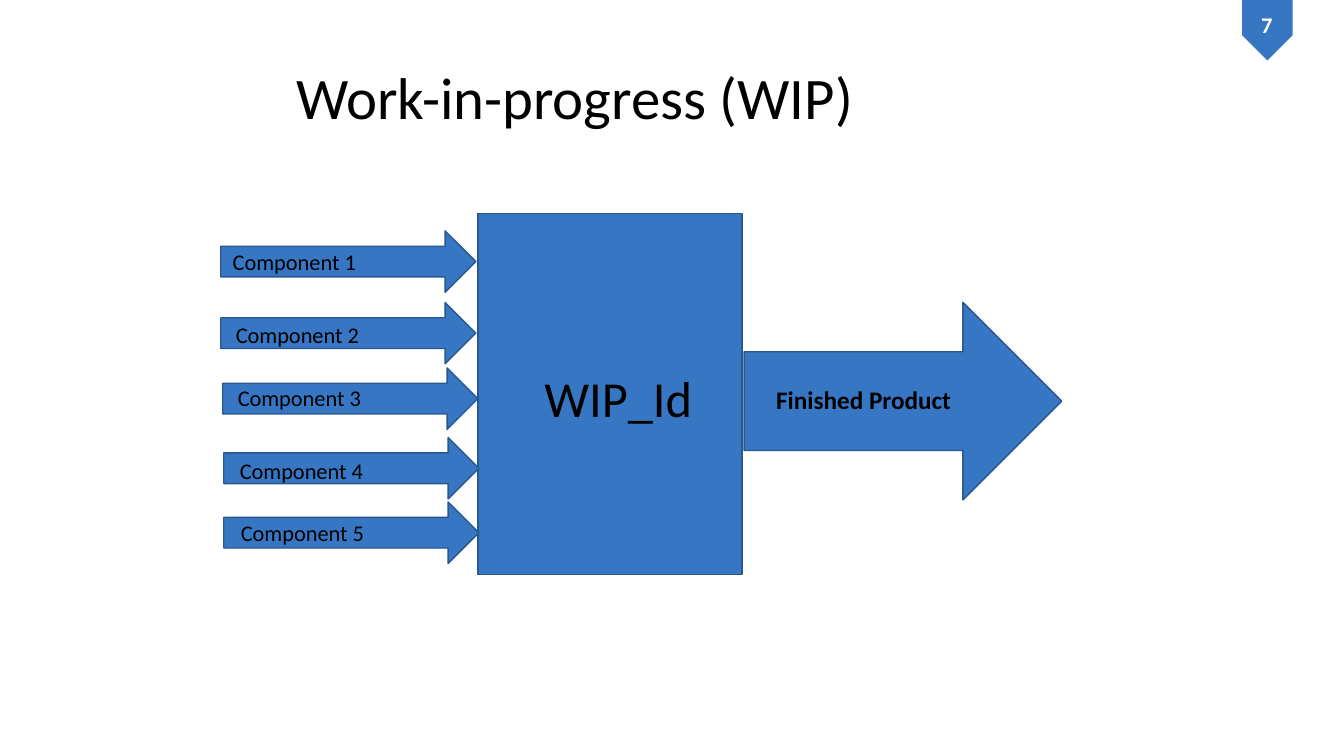
from pptx import Presentation
from pptx.dml.color import RGBColor
from pptx.enum.shapes import MSO_SHAPE
from pptx.enum.text import MSO_ANCHOR, PP_ALIGN
from pptx.util import Inches, Pt

BLUE = RGBColor(0x37, 0x76, 0xC3)
NAVY = RGBColor(0x29, 0x57, 0x90)
BLACK = RGBColor(0, 0, 0)
WHITE = RGBColor(0xFF, 0xFF, 0xFF)

# Arrow left, arrow top, label left, label top
COMPONENTS = [
    (2.19, 2.29, 2.21, 2.41),
    (2.19, 3.00, 2.24, 3.13),
    (2.21, 3.65, 2.26, 3.76),
    (2.22, 4.34, 2.28, 4.48),
    (2.22, 4.98, 2.29, 5.10),
]


def add_block(slide, kind, left, top, width, height, outline=NAVY):
    block = slide.shapes.add_shape(
        kind, Inches(left), Inches(top), Inches(width), Inches(height))
    block.shadow.inherit = False
    block.fill.solid()
    block.fill.fore_color.rgb = BLUE
    if outline is None:
        block.line.fill.background()
    else:
        block.line.color.rgb = outline
        block.line.width = Pt(1)
    return block


def add_text(slide, text, left, top, width, height, size=16, color=BLACK,
             bold=False, align=PP_ALIGN.LEFT, spacing=1.0):
    box = slide.shapes.add_textbox(
        Inches(left), Inches(top), Inches(width), Inches(height))
    frame = box.text_frame
    frame.word_wrap = True
    frame.vertical_anchor = MSO_ANCHOR.MIDDLE
    para = frame.paragraphs[0]
    para.alignment = align
    para.line_spacing = spacing
    run = para.add_run()
    run.text = text
    run.font.name = "Calibri"
    run.font.size = Pt(size)
    run.font.bold = bold
    run.font.color.rgb = color


def add_badge(slide, number):
    badge = add_block(slide, MSO_SHAPE.PENTAGON, 12.27, 0.05, 0.6, 0.5,
                      outline=None)
    badge.rotation = 90
    add_text(slide, number, 12.26, 0.06, 0.61, 0.37, color=WHITE, bold=True,
             align=PP_ALIGN.CENTER)


def main():
    deck = Presentation()
    deck.slide_width = Inches(13.33)
    deck.slide_height = Inches(7.5)
    slide = deck.slides.add_slide(deck.slide_layouts[6])

    add_badge(slide, "7")
    add_text(slide, "Work-in-progress (WIP)", 0.37, 0.66, 10.66, 0.67,
             size=42, align=PP_ALIGN.CENTER, spacing=0.9)

    add_block(slide, MSO_SHAPE.RECTANGLE, 4.74, 2.12, 2.62, 3.58)
    add_text(slide, "WIP_Id", 5.3, 3.59, 1.75, 0.71, size=36)

    for number, (left, top, label_left, label_top) in enumerate(COMPONENTS, 1):
        add_block(slide, MSO_SHAPE.RIGHT_ARROW, left, top, 2.53, 0.61)
        add_text(slide, f"Component {number}", label_left, label_top,
                 2.18, 0.37)

    add_block(slide, MSO_SHAPE.RIGHT_ARROW, 7.38, 3, 3.15, 1.96)
    add_text(slide, "Finished Product", 7.6, 3.76, 2.41, 0.4, size=18,
             bold=True)

    deck.save("out.pptx")


if __name__ == "__main__":
    main()
